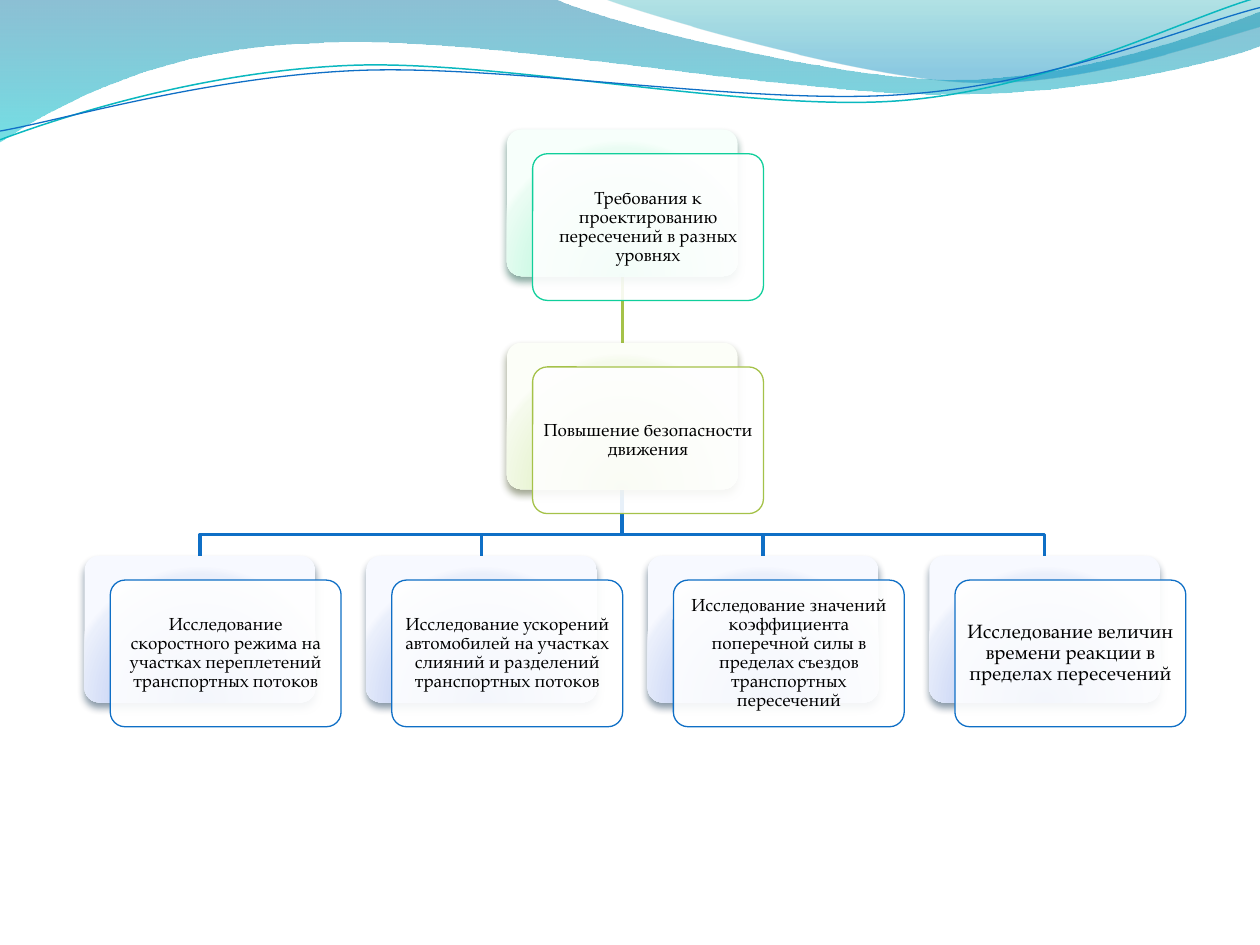
import math

from lxml import etree
from pptx import Presentation
from pptx.dml.color import RGBColor
from pptx.enum.shapes import MSO_CONNECTOR, MSO_SHAPE
from pptx.enum.text import MSO_ANCHOR, PP_ALIGN
from pptx.oxml.ns import qn
from pptx.util import Pt

ROUNDED = MSO_SHAPE.ROUNDED_RECTANGLE
STRAIGHT = MSO_CONNECTOR.STRAIGHT
MIDDLE = MSO_ANCHOR.MIDDLE
CENTER = PP_ALIGN.CENTER

FONT = "TeX Gyre Pagella"
TEAL, GREEN, BLUE = "10CF9B", "A5C249", "0F6FC6"
CARD_W, CARD_H = 131.9, 83.8
SHIFT_X, SHIFT_Y = 14.7, 13.9
COLUMN_STEP, LEVEL_STEP = 160.9, 121.8
GLOW_STOPS = (0, 43, 93, 100)
PALETTES = {
    TEAL: (("8DEAC2", "BAF8DB", "EAFCF3", "F7FFFB"), "044A37"),
    GREEN: (("C9DF97", "E0F0C1", "F5FAEC", "FCFEF8"), "3A4519"),
    BLUE: (("8DA8E3", "BBCBF3", "EAEFFB", "F7F9FF"), "042747"),
}
TOPICS = [
    ("Исследование скоростного режима на участках переплетений транспортных потоков", 10),
    ("Исследование ускорений автомобилей на участках слияний и разделений транспортных потоков", 10),
    ("Исследование значений коэффициента поперечной силы в пределах съездов транспортных пересечений", 10),
    ("Исследование величин времени реакции в пределах пересечений", 11),
]
BAND = [
    ("moveTo", (0, 0)), ("lnTo", (316.8, -0.7)),
    ("cubicBezTo", (342.7, 12.2), (478.1, 45.4), (545.8, 45.4)),
    ("cubicBezTo", (614.2, 45.4), (689.8, 18.7), (720, 6.5)),
    ("lnTo", (720.7, 25.9)),
    ("cubicBezTo", (707.8, 31.7), (626.4, 54.7), (537.1, 54)),
    ("cubicBezTo", (447.8, 54), (275, 20.2), (185, 24.5)),
    ("cubicBezTo", (92.9, 25.9), (33.1, 59.8), (-0.7, 81.4)), ("close",),
]
CREST = [
    ("moveTo", (344.9, -0.7)),
    ("cubicBezTo", (366.5, 7.9), (491, 44.6), (553.7, 46.8)),
    ("cubicBezTo", (616.3, 49.7), (691.9, 23), (720, 15.1)),
    ("lnTo", (720, 0)), ("close",),
]
UPPER_RIPPLE = [
    ("moveTo", (0, 79.9)),
    ("cubicBezTo", (34.6, 67), (113.8, 41), (199.4, 37.4)),
    ("cubicBezTo", (284.4, 33.8), (427, 64.1), (513.4, 57.6)),
    ("cubicBezTo", (599.8, 51.1), (675.4, 10.8), (718.6, -1.4)),
]
LOWER_RIPPLE = [
    ("moveTo", (0, 74.9)),
    ("cubicBezTo", (33.8, 69.1), (118.1, 43.9), (203.8, 40.3)),
    ("cubicBezTo", (290.2, 36.7), (429.8, 60.5), (516.2, 54)),
    ("cubicBezTo", (601.9, 48.2), (677.5, 15.1), (720, 4.3)),
]


def color(hex_value):
    """Turn a hex string into a colour."""
    return RGBColor.from_string(hex_value)


def add_node(parent, tag, **attributes):
    """Append a DrawingML element with the given attributes."""
    texts = {name: str(value) for name, value in attributes.items()}
    return etree.SubElement(parent, qn("a:" + tag), texts)


def add_color(parent, hex_value, opacity):
    """Append a colour with its opacity in percent."""
    add_node(add_node(parent, "srgbClr", val=hex_value), "alpha", val=opacity * 1000)


def set_gradient(shape, stops, radial=False):
    """Fill a shape with a downward or a radial gradient."""
    gradient = etree.Element(qn("a:gradFill"), rotWithShape="1")
    stop_list = add_node(gradient, "gsLst")
    for position, hex_value, opacity in stops:
        add_color(add_node(stop_list, "gs", pos=position * 1000), hex_value, opacity)
    if radial:
        focus = add_node(gradient, "path", path="circle")
        add_node(focus, "fillToRect", l=50000, t=130000, r=50000, b=-30000)
    else:
        add_node(gradient, "lin", ang=5400000, scaled=1)
    shape._element.spPr[1].addnext(gradient)


def set_line(shape, hex_value, width):
    """Give a shape a solid line."""
    shape.line.color.rgb = color(hex_value)
    shape.line.width = Pt(width)


def add_curve(slide, box, steps, turn=0):
    """Draw a curved outline in a box that is turned by some degrees."""
    left, top, width, height = box
    mid_x, mid_y = left + width / 2, top + height / 2
    cos, sin = math.cos(math.radians(turn)), math.sin(math.radians(turn))
    builder = slide.shapes.build_freeform(Pt(left), Pt(top))
    builder.add_line_segments([(Pt(left + width), Pt(top + height))], close=False)
    curve = builder.convert_to_shape()
    curve.shadow.inherit = False
    curve.line.fill.background()
    curve.rotation = -turn % 360
    outline = curve._element.xpath(".//a:path")[0]
    for old_step in list(outline):
        outline.remove(old_step)
    for tag, *points in steps:
        step = add_node(outline, tag)
        for x, y in points:
            dx, dy = x - mid_x, y - mid_y
            add_node(step, "pt", x=Pt(dx * cos - dy * sin + width / 2),
                     y=Pt(dx * sin + dy * cos + height / 2))
    return curve


def add_waves(slide):
    """Draw the wave decoration along the top of the slide."""
    band = add_curve(slide, (-0.7, -0.7, 721.4, 82.1), BAND)
    set_gradient(band, [(0, "0074A1", 45), (100, "00C6CF", 55)])
    crest = add_curve(slide, (344.9, -0.7, 375.1, 50.4), CREST)
    set_gradient(crest, [(0, "00A1A9", 30), (80, "008BBF", 45)])
    for box, steps, hex_value, width in (
        ((-1.4, 15.8, 721.4, 51.1), UPPER_RIPPLE, "0AB8BF", 0.85),
        ((-1.4, 21.6, 722.2, 41.8), LOWER_RIPPLE, BLUE, 0.75),
    ):
        ripple = add_curve(slide, box, steps, turn=2.7)
        ripple.fill.background()
        set_line(ripple, hex_value, width)


def add_stem(slide, x, top, bottom):
    """Join the two upper cards with a vertical line."""
    stem = slide.shapes.add_connector(STRAIGHT, Pt(x), Pt(top), Pt(x), Pt(bottom))
    set_line(stem, GREEN, 2)
    add_node(stem._element.spPr, "effectLst")


def add_branch(slide, x, top, end_x, bottom):
    """Draw an elbow line from a parent card to a child card."""
    bend = top + 0.68 * (bottom - top)
    builder = slide.shapes.build_freeform(Pt(x), Pt(top))
    corners = [(x, bend), (end_x, bend), (end_x, bottom)]
    builder.add_line_segments([(Pt(a), Pt(b)) for a, b in corners], close=False)
    branch = builder.convert_to_shape()
    branch.shadow.inherit = False
    branch.fill.background()
    set_line(branch, BLUE, 2)


def add_card(slide, left, top, accent, wording, size):
    """Place a glowing back plate and a framed label over it."""
    glow, shade = PALETTES[accent]
    plate, label = (
        slide.shapes.add_shape(ROUNDED, Pt(x), Pt(y), Pt(CARD_W), Pt(CARD_H))
        for x, y in ((left, top), (left + SHIFT_X, top + SHIFT_Y))
    )
    for layer in (plate, label):
        layer.adjustments[0] = 0.1
        layer.shadow.inherit = False
    set_gradient(plate, [(stop, tint, 100) for stop, tint in zip(GLOW_STOPS, glow)], radial=True)
    plate.line.fill.background()
    effects = plate._element.spPr.find(qn("a:effectLst"))
    shadow = add_node(effects, "outerShdw", blurRad=Pt(4.5), dist=Pt(3), dir=5400000, rotWithShape=0)
    add_color(shadow, shade, 48)

    label.fill.solid()
    label.fill.fore_color.rgb = color("FFFFFF")
    add_node(label._element.xpath("./p:spPr/a:solidFill/a:srgbClr")[0], "alpha", val=90000)
    set_line(label, accent, 0.75)
    frame = label.text_frame
    frame.word_wrap = True
    frame.vertical_anchor = MIDDLE
    inset = Pt(0.3 * size)
    frame.margin_left = frame.margin_right = frame.margin_top = frame.margin_bottom = inset
    paragraph = frame.paragraphs[0]
    paragraph.alignment = CENTER
    paragraph.line_spacing = 0.9
    paragraph.space_after = Pt(0.35 * size)
    run = paragraph.add_run()
    run.text = wording
    run.font.name = FONT
    run.font.size = Pt(size)
    run.font.color.rgb = color("000000")


def add_hierarchy(slide, left, top):
    """Lay out the three levels of cards and the lines between them."""
    root_left = left + COLUMN_STEP * (len(TOPICS) - 1) / 2
    root_mid = root_left + CARD_W / 2
    second, third = top + LEVEL_STEP, top + 2 * LEVEL_STEP
    columns = [left + COLUMN_STEP * index for index in range(len(TOPICS))]
    for column in reversed(columns):
        add_branch(slide, root_mid, second + CARD_H, column + CARD_W / 2, third)
    add_stem(slide, root_mid, top + CARD_H, second)
    add_card(slide, root_left, top, TEAL, "Требования к проектированию пересечений в разных уровнях", 10)
    add_card(slide, root_left, second, GREEN, "Повышение безопасности движения", 10)
    for column, (wording, size) in zip(columns, TOPICS):
        add_card(slide, column, third, BLUE, wording, size)


def main():
    """Build and save the slide."""
    deck = Presentation()
    deck.slide_width, deck.slide_height = Pt(720), Pt(540)
    slide = deck.slides.add_slide(deck.slide_layouts[6])
    add_waves(slide)
    add_hierarchy(slide, 48.3, 74)
    deck.save("out.pptx")


if __name__ == "__main__":
    main()
